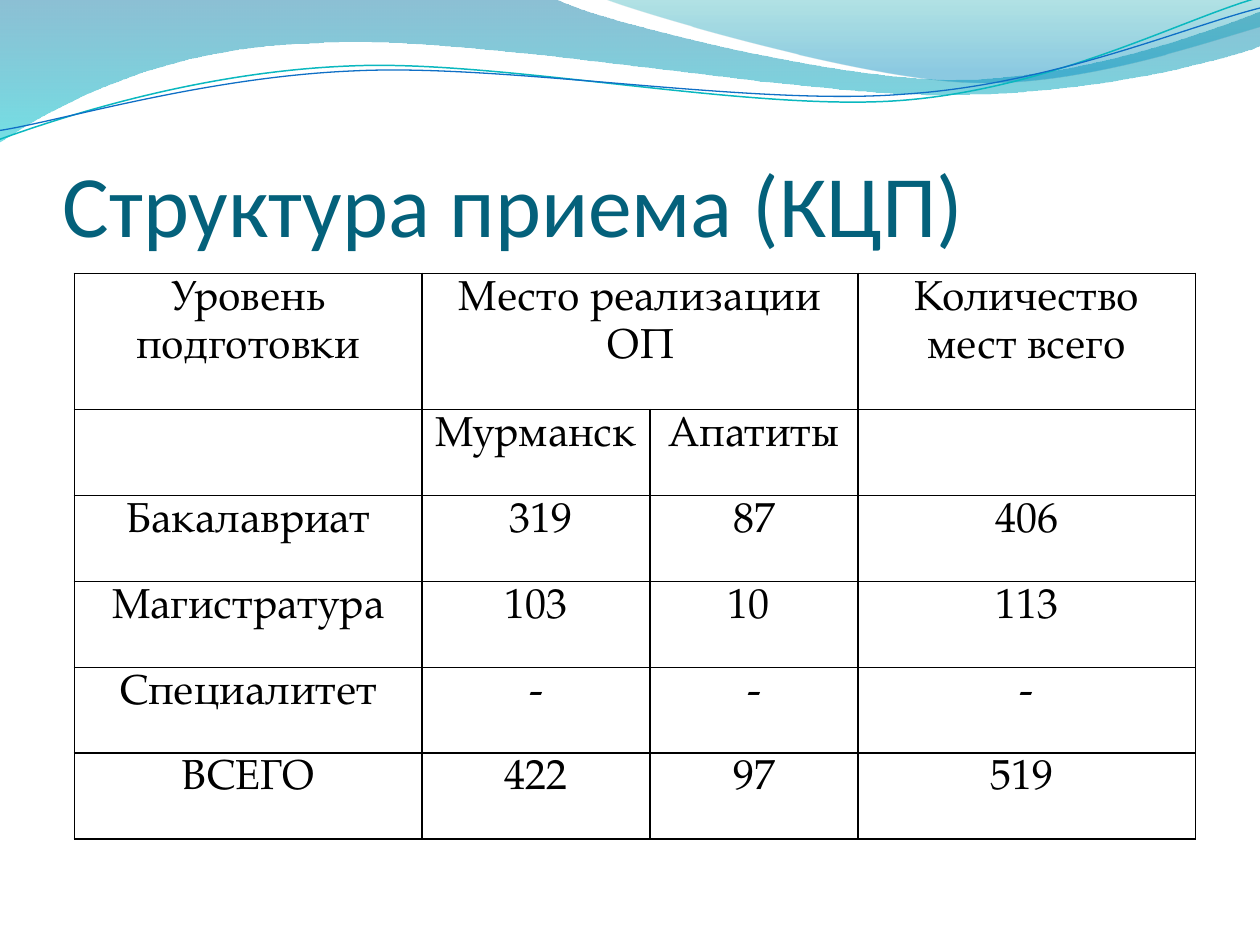
from lxml import etree
from pptx import Presentation, util as u
from pptx.dml import color
from pptx.enum import text
from pptx.oxml import ns, parse_xml

COLORS = {
    "title": "04617B", "text": "000000", "border": "000000",
    "wave_top": "0074A1", "wave_bottom": "00C6CF",
    "crest_top": "00A1A9", "crest_bottom": "008BBF",
    "teal_line": "0AB8BF", "blue_line": "0F6FC6",
}
COLUMNS, ROWS = 10, 7.5
CURVE_ROTATION = 357.3

# Outlines: a pair of numbers is a straight step, six numbers a Bezier curve.
WAVE = [
    (0, 0), (4.4, -0.01), (4.76, 0.17, 6.64, 0.63, 7.58, 0.63),
    (8.53, 0.63, 9.58, 0.26, 10, 0.09), (10.01, 0.36),
    (9.83, 0.44, 8.7, 0.76, 7.46, 0.75), (6.22, 0.75, 3.82, 0.28, 2.57, 0.34),
    (1.29, 0.36, 0.46, 0.83, -0.01, 1.13), (0, 0),
]
CREST = [
    (4.79, -0.01), (5.09, 0.11, 6.82, 0.62, 7.69, 0.65),
    (8.56, 0.69, 9.61, 0.32, 10, 0.21), (10, 0), (4.79, -0.01),
]
TEAL_CURVE = [
    (-0.02, 0.87), (0.47, 0.72, 1.58, 0.41, 2.78, 0.42),
    (3.96, 0.42, 5.91, 0.93, 7.12, 0.9), (8.32, 0.87, 9.4, 0.36, 10, 0.22),
]
BLUE_CURVE = [
    (-0.02, 0.8), (0.46, 0.75, 1.64, 0.45, 2.83, 0.46),
    (4.03, 0.46, 5.96, 0.89, 7.16, 0.85), (8.35, 0.83, 9.42, 0.42, 10.02, 0.3),
]

ADMISSIONS = [
    ["Уровень подготовки", "Место реализации ОП", "", "Количество мест всего"],
    ["", "Мурманск", "Апатиты", ""],
    ["Бакалавриат", " 319", "87", "406"],
    ["Магистратура", "103", "10 ", "113"],
    ["Специалитет", "-", "-", "-"],
    ["ВСЕГО", "422", "97", "519 "],
]


def rgb(name):
    return color.RGBColor.from_string(COLORS[name])


class SlideBuilder:
    heading_font = "Calibri"
    body_font = "TeX Gyre Pagella"

    def __init__(self, presentation):
        self.column = presentation.slide_width / COLUMNS
        self.row = presentation.slide_height / ROWS
        self.slide = presentation.slides.add_slide(presentation.slide_layouts[6])

    def box(self, left, top, width, height):
        return (round(left * self.column), round(top * self.row),
                round(width * self.column), round(height * self.row))

    def outline(self, outline, closed):
        """Lay every point as a straight step, then join steps into Bezier curves."""
        points = [(segment[i] * self.column, segment[i + 1] * self.row)
                  for segment in outline for i in range(0, len(segment), 2)]
        builder = self.slide.shapes.build_freeform(*points[0])
        builder.add_line_segments(points[1:], close=closed)
        shape = builder.convert_to_shape()
        shape.shadow.inherit = False
        steps = iter(list(shape._element.iter(ns.qn("a:lnTo"))))
        for segment in outline[1:]:
            first = next(steps)
            if len(segment) == 6:
                curve = etree.Element(ns.qn("a:cubicBezTo"))
                first.addprevious(curve)
                for step in (first, next(steps), next(steps)):
                    curve.append(step[0])
                    step.getparent().remove(step)
        return shape

    def gradient_area(self, outline, stops):
        """Fill downwards; each stop is position, colour name, opacity in percent."""
        shape = self.outline(outline, closed=True)
        shape.line.fill.background()
        shape.fill.gradient()
        shape.fill.gradient_angle = 270
        elements = shape._element.spPr.iter(ns.qn("a:gs"))
        for stop, element, (position, name, opacity) in zip(
                shape.fill.gradient_stops, elements, stops):
            stop.position = position
            stop.color.rgb = rgb(name)
            etree.SubElement(element[0], ns.qn("a:alpha"), val=str(opacity * 1000))

    def curve(self, outline, name, width):
        shape = self.outline(outline, closed=False)
        shape.rotation = CURVE_ROTATION
        shape.fill.background()
        shape.line.color.rgb = rgb(name)
        shape.line.width = u.Pt(width)

    def style(self, paragraph, font, size, name):
        paragraph.font.name = font
        paragraph.font.size = u.Pt(size)
        paragraph.font.color.rgb = rgb(name)

    def title(self, wording, *place):
        frame = self.slide.shapes.add_textbox(*self.box(*place)).text_frame
        frame.word_wrap = True
        frame.vertical_anchor = text.MSO_ANCHOR.BOTTOM
        frame.margin_left = frame.margin_right = frame.margin_bottom = 0
        frame.text = wording
        self.style(frame.paragraphs[0], self.heading_font, 50, "title")

    def cell(self, cell, wording):
        cell.margin_left = cell.margin_right = u.Inches(0.07)
        cell.margin_top = cell.margin_bottom = 0
        properties = cell._tc.get_or_add_tcPr()
        for side in ("lnL", "lnR", "lnT", "lnB"):
            properties.append(parse_xml(
                f'<a:{side} {ns.nsdecls("a")} w="12700"><a:solidFill>'
                f'<a:srgbClr val="{COLORS["border"]}"/></a:solidFill></a:{side}>'))
        cell.fill.background()
        if wording:
            cell.text = wording
            paragraph = cell.text_frame.paragraphs[0]
            paragraph.alignment = text.PP_ALIGN.CENTER
            paragraph.line_spacing = 1.15
            self.style(paragraph, self.body_font, 24, "text")

    def table(self, values, left, top, widths, heights):
        place = self.box(left, top, sum(widths), sum(heights))
        table = self.slide.shapes.add_table(len(heights), len(widths), *place).table
        table.first_row = table.horz_banding = False
        for column, width in zip(table.columns, widths):
            column.width = round(width * self.column)
        for row, height, wordings in zip(table.rows, heights, values):
            row.height = round(height * self.row)
            for cell, wording in zip(row.cells, wordings):
                self.cell(cell, wording)
        return table


def main():
    presentation = Presentation()
    presentation.slide_width, presentation.slide_height = u.Inches(10), u.Inches(7.5)
    builder = SlideBuilder(presentation)
    builder.gradient_area(WAVE, [(0, "wave_top", 45), (1, "wave_bottom", 55)])
    builder.gradient_area(CREST, [(0, "crest_top", 30), (0.8, "crest_bottom", 45)])
    builder.curve(TEAL_CURVE, "teal_line", 0.85)
    builder.curve(BLUE_CURVE, "blue_line", 0.75)
    builder.title("Структура приема (КЦП)", 0.5, 0.77, 9, 1.25)
    header_height, table_height = 1.08, 4.49
    row_height = (table_height - header_height) / (len(ADMISSIONS) - 1)
    table = builder.table(ADMISSIONS, 0.59, 2.17, [2.76, 1.81, 1.65, 2.68],
                          [header_height] + [row_height] * (len(ADMISSIONS) - 1))
    table.cell(0, 1).merge(table.cell(0, 2))
    presentation.save("out.pptx")


if __name__ == "__main__":
    main()
